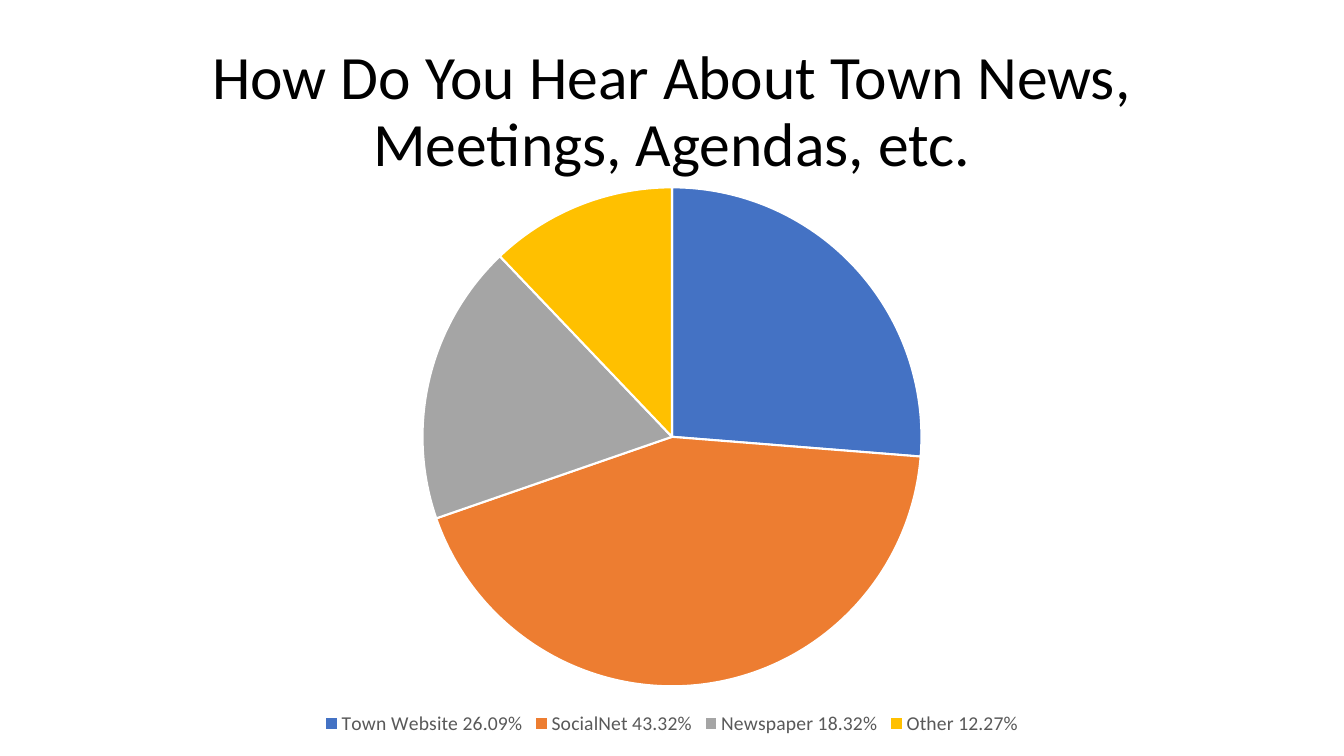
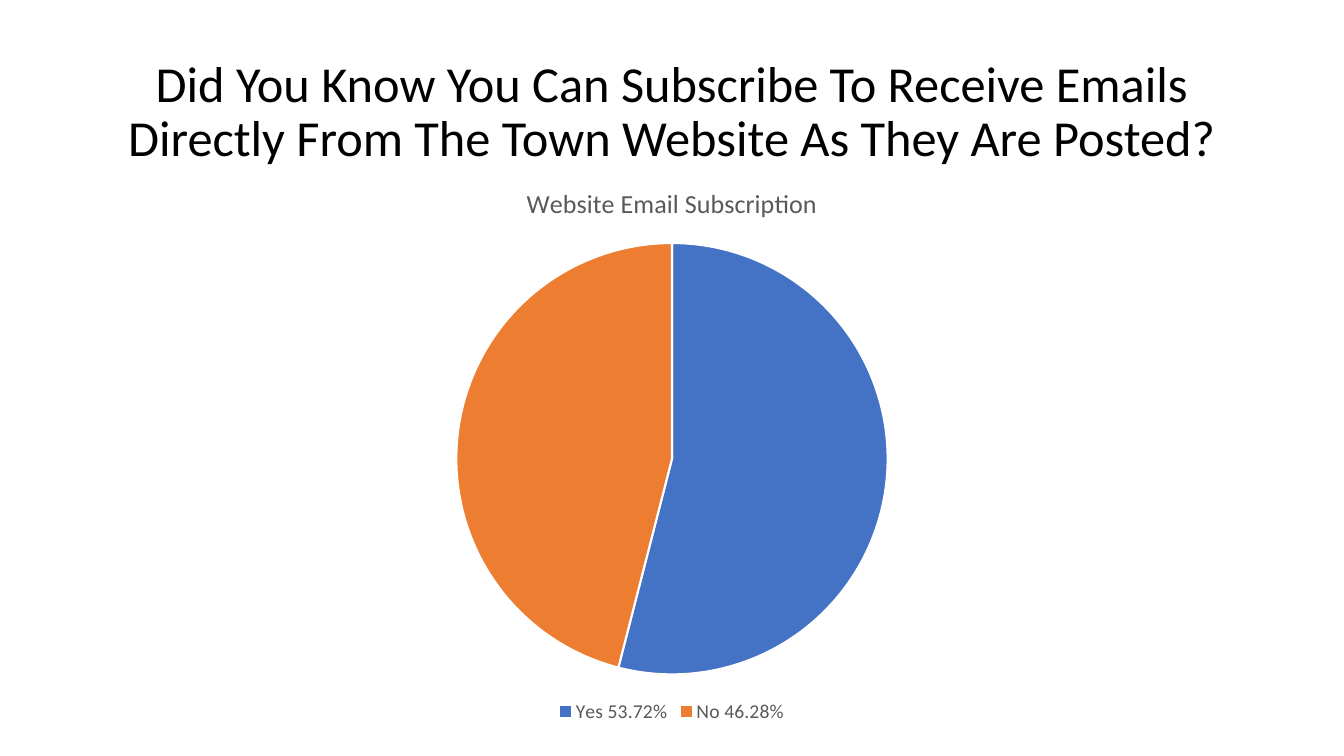
from pptx import Presentation
from pptx.chart.data import CategoryChartData
from pptx.dml.color import RGBColor
from pptx.enum.chart import XL_CHART_TYPE, XL_LEGEND_POSITION
from pptx.enum.text import MSO_ANCHOR, PP_ALIGN
from pptx.util import Cm, Pt

BLACK = RGBColor(0x00, 0x00, 0x00)
WHITE = RGBColor(0xFF, 0xFF, 0xFF)
GREY_TEXT = RGBColor(0x59, 0x59, 0x59)
BLUE = RGBColor(0x44, 0x72, 0xC4)
ORANGE = RGBColor(0xED, 0x7D, 0x31)
GREY = RGBColor(0xA5, 0xA5, 0xA5)
GOLD = RGBColor(0xFF, 0xC0, 0x00)
SLICE_COLOURS = (BLUE, ORANGE, GREY, GOLD)

FONT = "Calibri"
SLIDE_W, SLIDE_H = Cm(33.87), Cm(19.05)
MARGIN = Cm(2.33)
CONTENT_W = SLIDE_W - 2 * MARGIN
TITLE_BOX = (MARGIN, Cm(1.01), CONTENT_W, Cm(3.68))

SURVEY = (
    {
        "title": "How Do You Hear About Town News, Meetings, Agendas, etc.",
        "title_size": 44,
        "chart_title": None,
        "chart_box": (MARGIN, Cm(4.37), CONTENT_W, Cm(14.27)),
        "answers": {
            "Town Website 26.09%": 26,
            "SocialNet 43.32%": 43,
            "Newspaper 18.32%": 18,
            "Other 12.27%": 12,
        },
    },
    {
        "title": "Did You Know You Can Subscribe To Receive Emails "
                 "Directly From The Town Website As They Are Posted?",
        "title_size": 36,
        "chart_title": "Website Email Subscription",
        "chart_box": (MARGIN, Cm(4.14), CONTENT_W, Cm(14.2)),
        "answers": {"Yes 53.72%": 54, "No 46.28%": 46},
    },
)


def set_all(target, values):
    for name, value in values.items():
        setattr(target, name, value)


def set_font(font, size, colour):
    set_all(font, {"name": FONT, "size": Pt(size), "bold": False})
    font.color.rgb = colour


def add_title(s, box, text, size):
    tf = s.shapes.add_textbox(*box).text_frame
    set_all(tf, {"word_wrap": True, "vertical_anchor": MSO_ANCHOR.MIDDLE})
    p = tf.paragraphs[0]
    set_all(p, {"alignment": PP_ALIGN.CENTER, "line_spacing": 0.9})
    r = p.add_run()
    r.text = text
    set_font(r.font, size, BLACK)


def add_pie(s, box, answers, title):
    data = CategoryChartData()
    data.categories = list(answers)
    data.add_series("Series 1", list(answers.values()))
    chart = s.shapes.add_chart(XL_CHART_TYPE.PIE, *box, data).chart
    set_font(chart.font, 10, BLACK)
    set_all(chart, {"has_title": title is not None, "has_legend": True})
    if title:
        p = chart.chart_title.text_frame.paragraphs[0]
        r = p.add_run()
        r.text = title
        set_font(r.font, 18.6, GREY_TEXT)
    set_all(chart.legend, {
        "position": XL_LEGEND_POSITION.BOTTOM,
        "include_in_layout": False,
    })
    set_font(chart.legend.font, 14, GREY_TEXT)
    plot = chart.plots[0]
    plot.vary_by_categories = True
    for i, colour in enumerate(SLICE_COLOURS[:len(answers)]):
        slice_format = plot.series[0].points[i].format
        slice_format.fill.solid()
        slice_format.fill.fore_color.rgb = colour
        slice_format.line.color.rgb = WHITE
        slice_format.line.width = Pt(1.5)


def add_survey_slide(prs, question):
    s = prs.slides.add_slide(prs.slide_layouts[6])
    add_title(s, TITLE_BOX, question["title"], question["title_size"])
    add_pie(s, question["chart_box"], question["answers"],
            question["chart_title"])


def main():
    prs = Presentation()
    set_all(prs, {"slide_width": SLIDE_W, "slide_height": SLIDE_H})
    for question in SURVEY:
        add_survey_slide(prs, question)
    prs.save("out.pptx")


if __name__ == "__main__":
    main()
